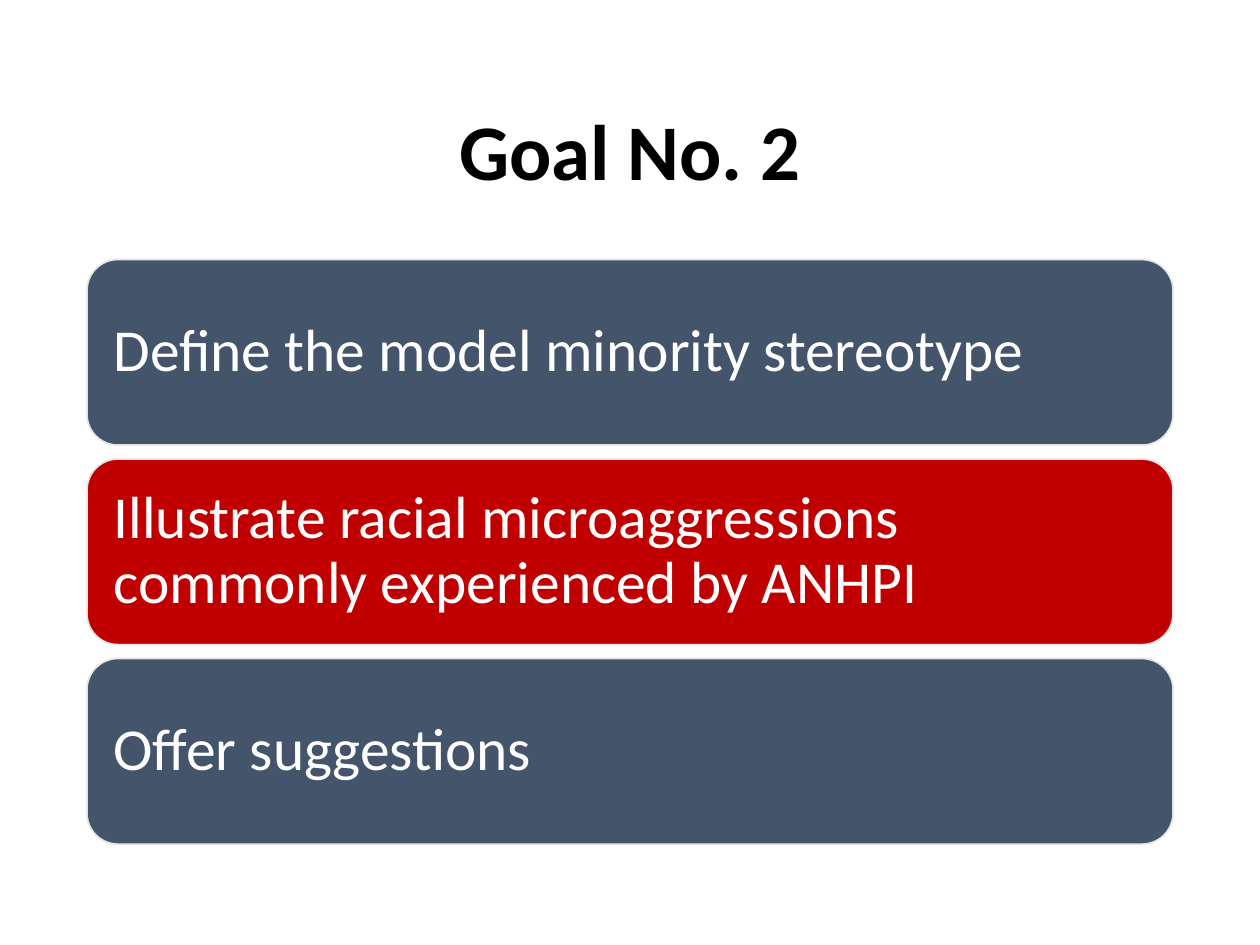
from dataclasses import dataclass

from pptx import Presentation
from pptx.dml.color import RGBColor as RGB
from pptx.enum.shapes import MSO_SHAPE as Shape
from pptx.enum.text import MSO_ANCHOR as Anchor, MSO_AUTO_SIZE as AutoSize, PP_ALIGN as Align
from pptx.util import Inches, Pt


@dataclass(frozen=True)
class Theme:
    font: str = "Calibri"
    title_size: Pt = Pt(45)
    goal_size: Pt = Pt(34)
    title_color: RGB = RGB.from_string("000000")
    goal_color: RGB = RGB.from_string("FFFFFF")
    bar: RGB = RGB.from_string("44546A")
    current_bar: RGB = RGB.from_string("C00000")
    outline: RGB = RGB.from_string("E7E6E6")


THEME = Theme()
LEFT, WIDTH = Inches(0.69), Inches(8.62)
GOALS = [
    "Define the model minority stereotype",
    "Illustrate racial microaggressions commonly experienced by ANHPI",
    "Offer suggestions",
]
CURRENT_GOAL = 1


def set_all(target, values):
    for name, value in values.items():
        setattr(target, name, value)


def write(frame, wording, size, color, align, bold=False, inset=Inches(0.1)):
    """Fill a text frame with one formatted paragraph."""
    set_all(frame, {
        "text": wording, "word_wrap": True, "auto_size": AutoSize.NONE,
        "vertical_anchor": Anchor.MIDDLE,
        "margin_left": inset, "margin_right": inset,
    })
    line = frame.paragraphs[0]
    set_all(line, {"alignment": align, "line_spacing": 0.9})
    font = line.runs[0].font
    set_all(font, {"name": THEME.font, "size": size, "bold": bold})
    font.color.rgb = color
    return line


def place_title(slide, wording, left, top, width, height):
    title = slide.shapes.title
    set_all(title, {"left": left, "top": top, "width": width, "height": height})
    line = write(title.text_frame, wording, THEME.title_size, THEME.title_color,
                 Align.CENTER, bold=True)
    line.space_after = Pt(6)


def place_goals(slide, goals, current, left, top, width, height, gap):
    """Stack equal bars in the box, with the current goal highlighted."""
    bar_height = (height - gap * (len(goals) - 1)) // len(goals)
    for row, goal in enumerate(goals):
        bar = slide.shapes.add_shape(Shape.ROUNDED_RECTANGLE, left,
                                     top + row * (bar_height + gap), width, bar_height)
        bar.shadow.inherit = False
        bar.fill.solid()
        bar.fill.fore_color.rgb = THEME.current_bar if row == current else THEME.bar
        bar.line.color.rgb = THEME.outline
        bar.line.width = Pt(1)
        write(bar.text_frame, goal, THEME.goal_size, THEME.goal_color,
              Align.LEFT, inset=Inches(0.14))


def main():
    deck = Presentation()
    set_all(deck, {"slide_width": Inches(10), "slide_height": Inches(7.5)})
    title_only = deck.slide_layouts[5]
    slide = deck.slides.add_slide(title_only)

    # Heading
    place_title(slide, "Goal No. 2", LEFT, Inches(0.61), WIDTH, Inches(1.24))
    # Goal bars
    place_goals(slide, GOALS, CURRENT_GOAL, LEFT, Inches(2.06), WIDTH,
                Inches(4.64), gap=Inches(0.11))

    deck.save("out.pptx")


if __name__ == "__main__":
    main()
